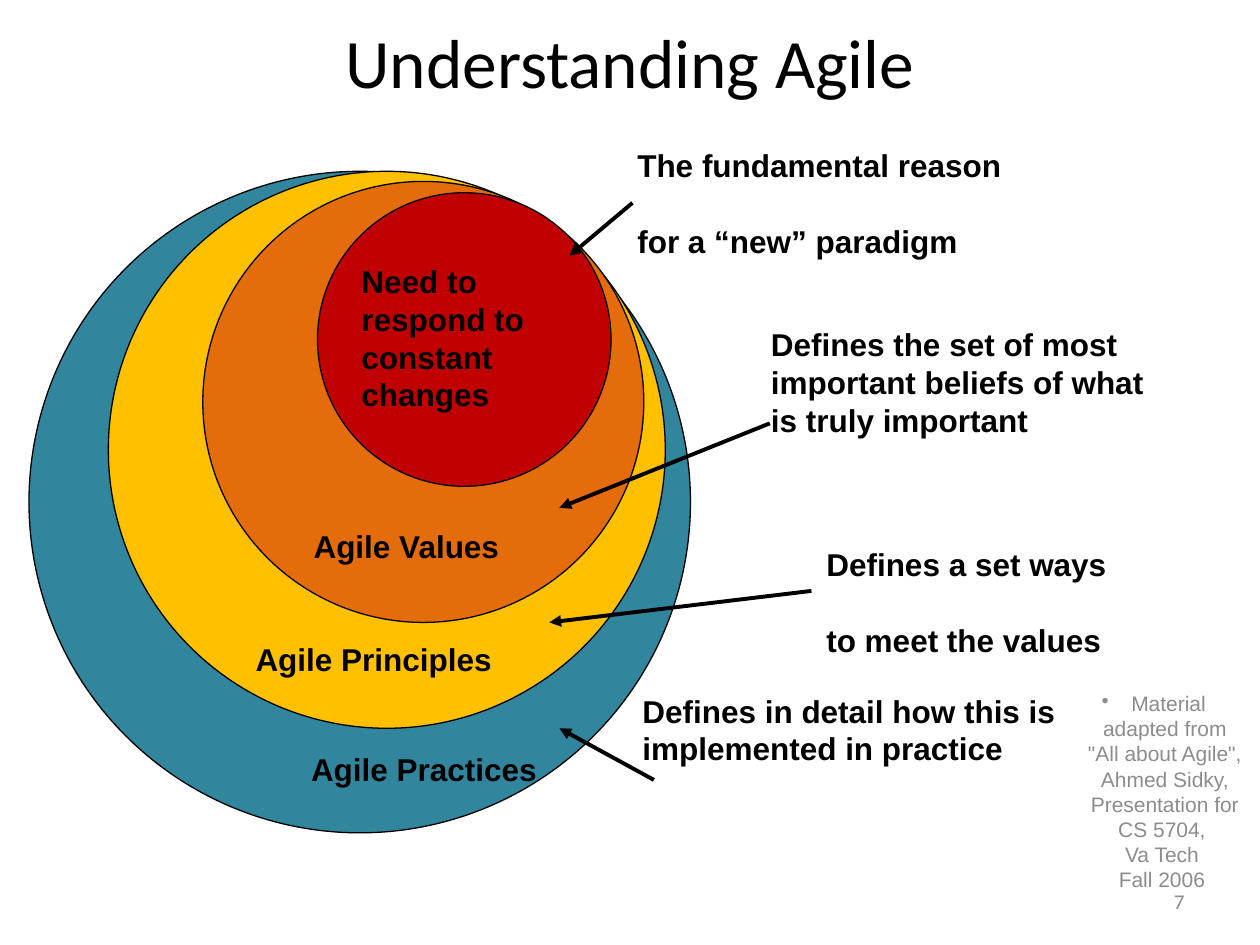
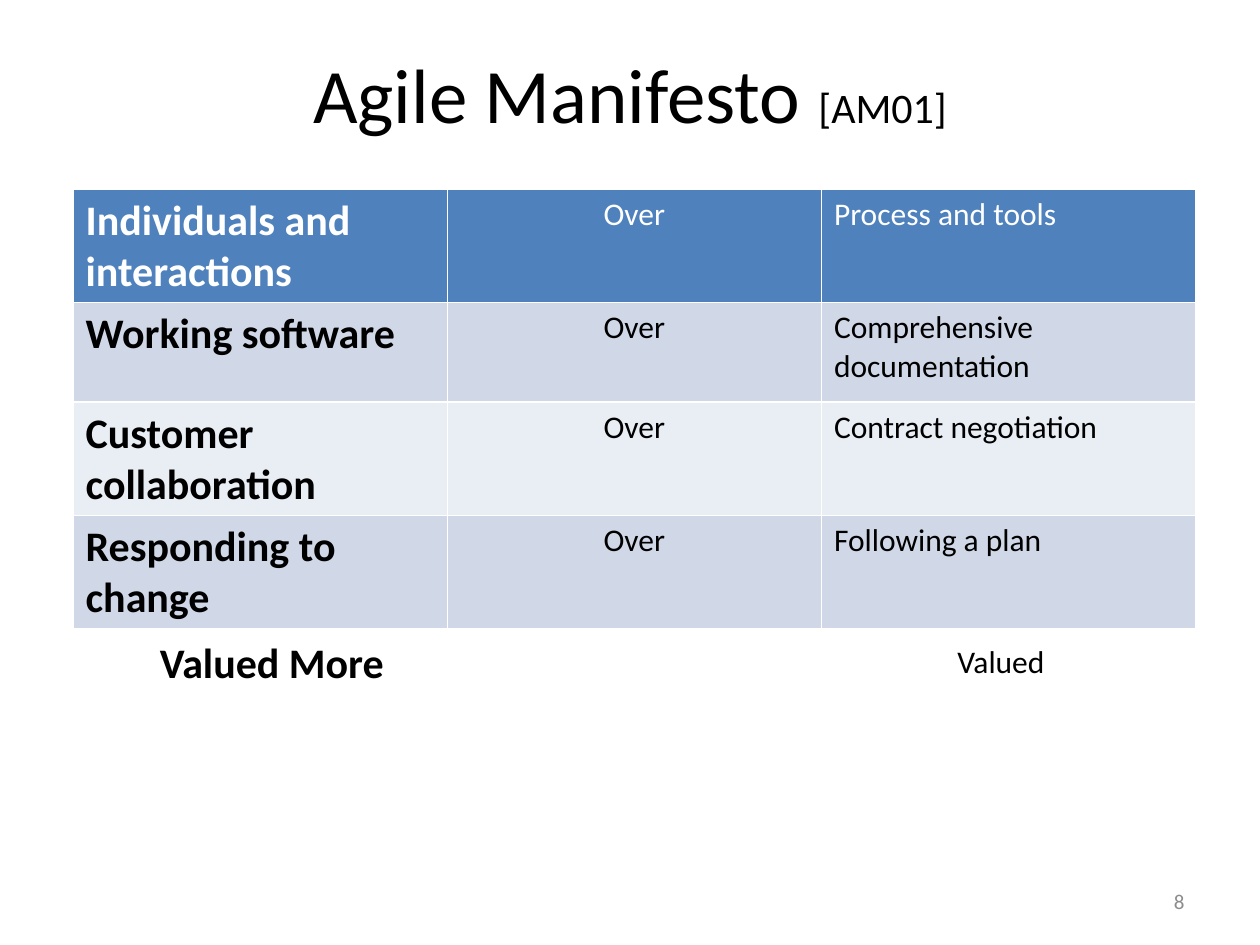
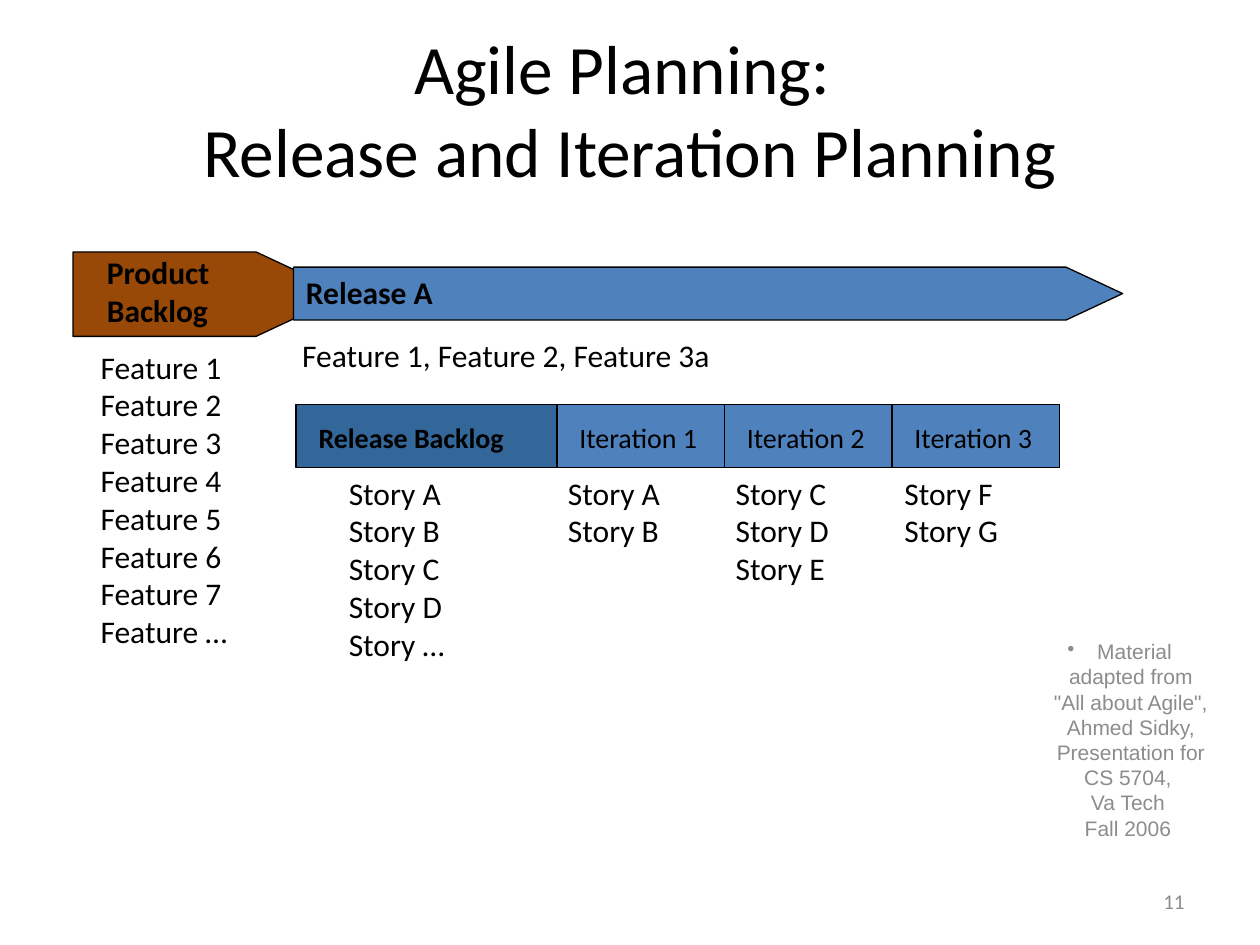
"""Build three slides on agile ideas, the manifesto and release planning."""
from dataclasses import dataclass

from lxml import etree
from pptx import Presentation
from pptx.dml.color import RGBColor
from pptx.enum import shapes, text
from pptx.oxml import ns
from pptx.util import Inches, Pt


@dataclass(frozen=True)
class Theme:
    """Colours, fonts and type sizes."""
    black: str = "000000"
    white: str = "FFFFFF"
    grey: str = "8C8C8C"
    teal: str = "31859C"
    yellow: str = "FFC000"
    orange: str = "E46C0A"
    red: str = "C00000"
    blue: str = "4F81BD"
    navy: str = "336699"
    brown: str = "984807"
    band_dark: str = "D0D8E8"
    band_light: str = "E9EDF4"
    heading_font: str = "Calibri"
    diagram_font: str = "Arial"
    title: float = 39.6
    title_large: float = 44
    strong: float = 24
    body: float = 18
    label: float = 16
    small: float = 12
    outline: float = 0.75
    arrow: float = 2.25


class Deck:
    """Draw styled elements on the current slide."""

    def __init__(self, theme):
        """Start an empty presentation."""
        self.theme = theme
        self.presentation = Presentation()
        self.presentation.slide_width = Inches(10)
        self.presentation.slide_height = Inches(7.5)
        self.slide = None

    def style(self, paragraph, size=None, color=None, bold=False, font=None, align=text.PP_ALIGN.LEFT):
        """Format one paragraph."""
        paragraph.alignment = align
        paragraph.font.size = Pt(size or self.theme.body)
        paragraph.font.color.rgb = RGBColor.from_string(color or self.theme.black)
        paragraph.font.bold = bold
        paragraph.font.name = font or self.theme.heading_font

    def add_slide(self, title, number, top, height, size, suffix=None):
        """Add a slide with its title and page number."""
        self.slide = self.presentation.slides.add_slide(self.presentation.slide_layouts[5])
        shape = self.slide.shapes.title
        shape.left, shape.top, shape.width, shape.height = map(Inches, (0.5, top, 9, height))
        frame = shape.text_frame
        frame.text = title
        frame.auto_size = text.MSO_AUTO_SIZE.NONE
        frame.vertical_anchor = text.MSO_ANCHOR.MIDDLE
        self.style(frame.paragraphs[0], size, align=text.PP_ALIGN.CENTER)
        if suffix:
            run = frame.paragraphs[0].add_run()
            run.text = suffix
            run.font.size = Pt(self.theme.strong)
        self.text_box(7.17, 6.95, 2.33, 0.4, str(number), wrap=True, anchor=text.MSO_ANCHOR.MIDDLE,
                      size=self.theme.small, color=self.theme.grey, align=text.PP_ALIGN.RIGHT)

    def set_text(self, shape, content, wrap=False, anchor=text.MSO_ANCHOR.TOP, gap=0, **style):
        """Fill a shape with formatted paragraphs."""
        frame = shape.text_frame
        frame.text = content
        frame.word_wrap = wrap
        frame.vertical_anchor = anchor
        if anchor == text.MSO_ANCHOR.TOP:
            frame.auto_size = text.MSO_AUTO_SIZE.SHAPE_TO_FIT_TEXT
        for index, paragraph in enumerate(frame.paragraphs):
            self.style(paragraph, **style)
            if index and gap:
                paragraph.space_before = Pt(gap)

    def text_box(self, left, top, width, height, content, **options):
        """Add a text box."""
        shape = self.slide.shapes.add_textbox(*map(Inches, (left, top, width, height)))
        self.set_text(shape, content, **options)
        return shape

    def shape(self, kind, left, top, width, height, fill, outlined=True):
        """Add a filled preset shape."""
        shape = self.slide.shapes.add_shape(kind, *map(Inches, (left, top, width, height)))
        shape.shadow.inherit = False
        shape.fill.solid()
        shape.fill.fore_color.rgb = RGBColor.from_string(fill)
        if outlined:
            shape.line.color.rgb = RGBColor.from_string(self.theme.black)
            shape.line.width = Pt(self.theme.outline)
        else:
            shape.line.fill.background()
        return shape

    def arrow(self, *ends):
        """Add an arrow from the first point to the second."""
        connector = self.slide.shapes.add_connector(shapes.MSO_CONNECTOR.STRAIGHT, *map(Inches, ends))
        connector.line.color.rgb = RGBColor.from_string(self.theme.black)
        connector.line.width = Pt(self.theme.arrow)
        properties = connector._element.spPr
        etree.SubElement(properties.find(ns.qn("a:ln")), ns.qn("a:tailEnd"), type="triangle")
        etree.SubElement(properties, ns.qn("a:effectLst"))

    def credit(self, left, top):
        """Add the bulleted source note."""
        note = ("Material adapted from \"All about Agile\", Ahmed Sidky, Presentation for CS 5704, "
                "\vVa Tech \vFall 2006 ")
        shape = self.text_box(left, top, 1.45, 0.5, note, wrap=True, anchor=text.MSO_ANCHOR.MIDDLE,
                              size=self.theme.small, color=self.theme.grey,
                              font=self.theme.diagram_font, align=text.PP_ALIGN.CENTER)
        properties = shape.text_frame.paragraphs[0]._p.get_or_add_pPr()
        bullet = etree.Element(ns.qn("a:buChar"), char="•")
        properties.insert_element_before(bullet, "a:tabLst", "a:defRPr", "a:extLst")

    def table(self, left, top, column_width, heights, rows):
        """Add a comparison table with a header and banded rows."""
        theme = self.theme
        columns = len(rows[0])
        table = self.slide.shapes.add_table(len(rows), columns, Inches(left), Inches(top),
                                            Inches(column_width * columns), Inches(sum(heights))).table
        for column in table.columns:
            column.width = Inches(column_width)
        for index, values in enumerate(rows):
            table.rows[index].height = Inches(heights[index])
            fill = theme.band_dark if index % 2 else theme.band_light
            for position, value in enumerate(values):
                cell = table.cell(index, position)
                cell.text = value
                cell.fill.solid()
                cell.fill.fore_color.rgb = RGBColor.from_string(fill if index else theme.blue)
                self.style(cell.text_frame.paragraphs[0],
                           size=theme.body if position else theme.strong,
                           color=theme.black if index else theme.white,
                           bold=position == 0,
                           align=text.PP_ALIGN.CENTER if position == 1 else text.PP_ALIGN.LEFT)


def understanding_slide(deck):
    """Draw the nested circles and their explanations."""
    theme = deck.theme
    deck.add_slide("Understanding Agile", 7, 0.17, 0.62, theme.title)
    for left, top, diameter, fill in (
            (0.23, 1.36, 5.25, theme.teal), (0.86, 1.36, 4.42, theme.yellow),
            (1.61, 1.44, 3.5, theme.orange), (2.52, 1.53, 2.33, theme.red)):
        deck.shape(shapes.MSO_SHAPE.OVAL, left, top, diameter, diameter, fill)
    for left, top, width, height, content, wrap in (
            (2.77, 2.03, 1.96, 1.31, "Need to respond to constant changes", True),
            (2.39, 4.13, 1.69, 0.4, "Agile Values", False),
            (1.93, 5.03, 2.1, 0.4, "Agile Principles", False),
            (2.37, 5.9, 2.01, 0.4, "Agile Practices", False),
            (4.96, 1.11, 3.12, 1.07, "The fundamental reason \nfor a “new” paradigm", False),
            (6.02, 2.53, 3.17, 1.01,
             "Defines the set of most important beliefs of what is truly important", True),
            (6.46, 4.28, 2.45, 0.71, "Defines a set ways \nto meet the values", False),
            (5, 5.44, 3.52, 0.71, "Defines in detail how this is implemented in practice", True)):
        deck.text_box(left, top, width, height, content, wrap=wrap, gap=21.6,
                      bold=True, font=theme.diagram_font)
    for ends in ((5.19, 6.19, 4.44, 5.78), (6.44, 4.69, 4.36, 4.94),
                 (6.11, 3.36, 4.44, 4.03), (5.02, 1.61, 4.52, 2.03)):
        deck.arrow(*ends)
    deck.credit(8.52, 6.03)


def manifesto_slide(deck):
    """Draw the manifesto table and its captions."""
    theme = deck.theme
    deck.add_slide("Agile Manifesto ", 8, 0.3, 0.87, theme.title_large, "[AM01]")
    pairs = (("Individuals and interactions", "Process and tools"),
             ("Working software", "Comprehensive documentation"),
             ("Customer collaboration", "Contract negotiation"),
             ("Responding to change", "Following a plan"))
    rows = [(more, "Over", less) for more, less in pairs]
    deck.table(0.58, 1.5, 2.97, (0.71, 0.79, 0.79, 0.79), rows)
    deck.text_box(7.5, 5.05, 0.9, 0.4, "Valued")
    deck.text_box(1.17, 5, 2, 0.51, "Valued More", size=theme.strong, bold=True)


def planning_slide(deck):
    """Draw the backlog, the release and its iterations."""
    theme = deck.theme
    deck.add_slide("Agile Planning: \vRelease and Iteration Planning", 11, 0.3, 1.12, theme.title)
    deck.credit(8.25, 5.62)
    features = "\n".join(f"Feature {mark}" for mark in "1234567…")
    deck.text_box(0.7, 2.71, 1.39, 2.95, features)
    deck.text_box(2.3, 2.62, 3.86, 0.4, "Feature 1, Feature 2, Feature 3a")
    for left, top, width, height, fill in ((0.58, 2, 2.17, 0.67, theme.brown),
                                           (2.33, 2.12, 6.58, 0.42, theme.blue)):
        pentagon = deck.shape(shapes.MSO_SHAPE.PENTAGON, left, top, width, height, fill)
        pentagon.adjustments[0] = 1.07
    deck.text_box(0.75, 1.96, 1.18, 0.71, "Product\nBacklog", wrap=True, bold=True)
    deck.text_box(2.33, 2.12, 1.39, 0.4, "Release A", bold=True)
    for left, width, label, label_width, fill, story_left, stories in (
            (2.35, 2.07, "Release Backlog", 1.98, theme.navy, 2.67, "ABCD…"),
            (4.42, 1.33, "Iteration 1", 1.2, theme.blue, 4.41, "AB"),
            (5.75, 1.33, "Iteration 2", 1.2, theme.blue, 5.74, "CDE"),
            (7.08, 1.33, "Iteration 3", 1.2, theme.blue, 7.08, "FG")):
        is_backlog = fill == theme.navy
        deck.shape(shapes.MSO_SHAPE.RECTANGLE, left, 3.21, width, 0.5, fill)
        plate = deck.shape(shapes.MSO_SHAPE.RECTANGLE, left + 0.08, 3.29, label_width, 0.37,
                           fill, outlined=False)
        deck.set_text(plate, label, wrap=is_backlog, size=theme.label, bold=is_backlog)
        deck.text_box(story_left, 3.71, 1.06, 0.1 + 0.3 * len(stories),
                      "\n".join(f"Story {mark}" for mark in stories))


def main():
    """Build and save the presentation."""
    deck = Deck(Theme())
    understanding_slide(deck)
    manifesto_slide(deck)
    planning_slide(deck)
    deck.presentation.save("out.pptx")


if __name__ == "__main__":
    main()
